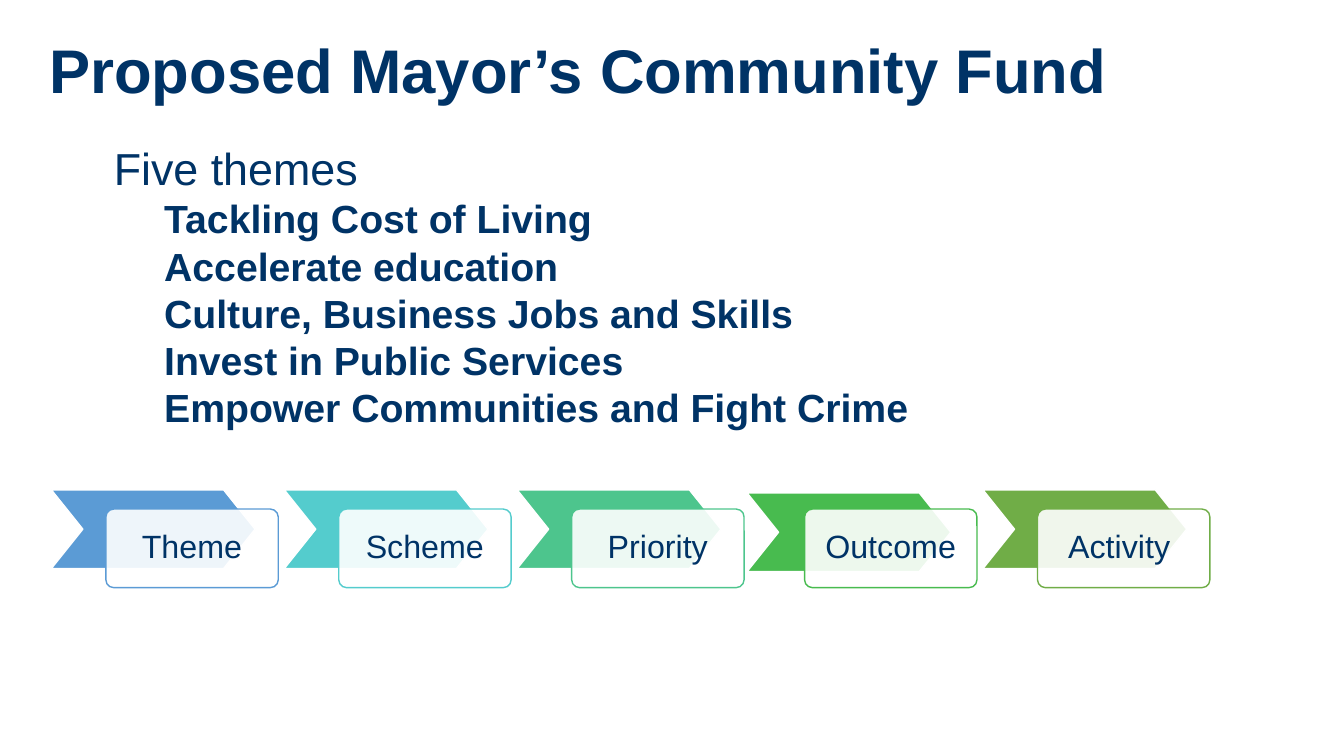
"""Build the community fund slide with its five themes and process chain."""
from dataclasses import dataclass

from lxml import etree
from pptx import Presentation
from pptx import util as u
from pptx.dml.color import RGBColor
from pptx.enum import shapes, text
from pptx.oxml import ns

FONT = "Arial"
NAVY = "003366"
WHITE = "FFFFFF"
FIRST_LEFT = 0.51
STEP_PITCH = 2.31
CHEVRON_TOP = 4.86
CARD_OFFSET = 0.54
CARD_TOP = 5.05
STEP_HEIGHT = 0.78
CARD_INSET = 0.18


@dataclass(frozen=True)
class Step:
    label: str
    color: str
    shift_x: float = 0
    shift_y: float = 0


STEPS = [
    Step("Theme", "5B9BD5"),
    Step("Scheme", "54CCCD"),
    Step("Priority", "4DC58D"),
    Step("Outcome", "48BB4F", shift_x=-0.03, shift_y=0.03),
    Step("Activity ", "70AD47"),
]
THEMES = [
    "Tackling Cost of Living",
    "Accelerate education",
    "Culture, Business Jobs and Skills",
    "Invest in Public Services",
    "Empower Communities and Fight Crime",
]


def rgb(color: str) -> RGBColor:
    return RGBColor.from_string(color)


def add_span(para, words: str, size: float, bold: bool = False) -> None:
    span = para.add_run()
    span.text = words
    span.font.name = FONT
    span.font.size = u.Pt(size)
    span.font.bold = bold
    span.font.color.rgb = rgb(NAVY)


def place(shape, left: float, top: float, width: float, height: float) -> None:
    shape.left, shape.top = u.Inches(left), u.Inches(top)
    shape.width, shape.height = u.Inches(width), u.Inches(height)


def add_panel(page, kind, left: float, top: float, width: float,
              adjustment: float, fill: str, line: str):
    panel = page.shapes.add_shape(kind, 0, 0, 0, 0)
    place(panel, left, top, width, STEP_HEIGHT)
    panel.adjustments[0] = adjustment
    panel.shadow.inherit = False
    panel.fill.solid()
    panel.fill.fore_color.rgb = rgb(fill)
    panel.line.color.rgb = rgb(line)
    panel.line.width = u.Pt(1)
    return panel


def set_opacity(shape, percent: int) -> None:
    color = shape.fill._xPr.find(ns.qn("a:solidFill"))[0]
    etree.SubElement(color, ns.qn("a:alpha")).set("val", str(percent * 1000))


def add_step(page, step: Step, left: float) -> None:
    add_panel(page, shapes.MSO_SHAPE.CHEVRON, left + step.shift_x,
              CHEVRON_TOP + step.shift_y, 2.02, 0.4, step.color, WHITE)
    card = add_panel(page, shapes.MSO_SHAPE.ROUNDED_RECTANGLE, left + CARD_OFFSET,
                     CARD_TOP, 1.71, 0.1, WHITE, step.color)
    set_opacity(card, 90)
    frame = card.text_frame
    frame.word_wrap = True
    frame.vertical_anchor = text.MSO_ANCHOR.MIDDLE
    frame.margin_left = frame.margin_right = u.Inches(CARD_INSET)
    frame.margin_top = frame.margin_bottom = u.Inches(CARD_INSET)
    para = frame.paragraphs[0]
    para.alignment = text.PP_ALIGN.CENTER
    para.line_spacing = 0.9
    add_span(para, step.label, 23)


def add_title(page) -> None:
    title = page.shapes.title
    place(title, 0.39, 0, 12.25, 1.45)
    frame = title.text_frame
    frame.word_wrap = True
    frame.vertical_anchor = text.MSO_ANCHOR.MIDDLE
    para = frame.paragraphs[0]
    para.alignment = text.PP_ALIGN.LEFT
    para.line_spacing = 0.9
    add_span(para, "Proposed Mayor’s Community Fund", 44, bold=True)


def add_themes(page) -> None:
    box = page.shapes.add_textbox(0, 0, 0, 0)
    place(box, 1.03, 1.35, 9.09, 3.3)
    frame = box.text_frame
    frame.word_wrap = True
    frame.auto_size = text.MSO_AUTO_SIZE.SHAPE_TO_FIT_TEXT
    add_span(frame.paragraphs[0], "Five themes", 32)
    for theme in THEMES:
        para = frame.add_paragraph()
        para.level = 1
        properties = para._p.get_or_add_pPr()
        properties.set("marL", str(u.Inches(0.5)))
        properties.set("indent", "0")
        add_span(para, theme, 28, bold=True)


def main() -> None:
    deck = Presentation()
    deck.slide_width, deck.slide_height = u.Inches(13.33), u.Inches(7.5)
    page = deck.slides.add_slide(deck.slide_layouts.get_by_name("Title Only"))
    add_title(page)
    for index, step in enumerate(STEPS):
        add_step(page, step, FIRST_LEFT + index * STEP_PITCH)
    add_themes(page)
    deck.save("out.pptx")


if __name__ == "__main__":
    main()
